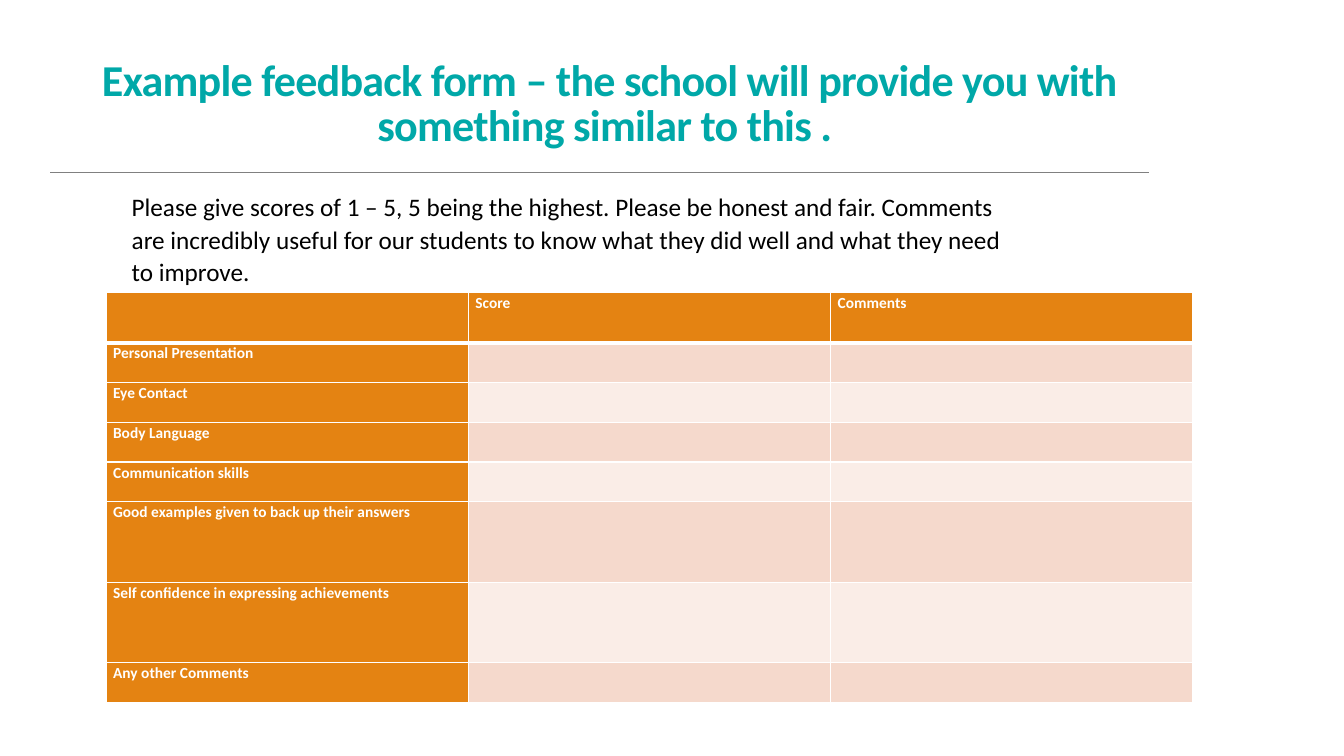
from dataclasses import dataclass

from lxml import etree
from pptx import Presentation
from pptx.dml.color import RGBColor
from pptx.enum.shapes import MSO_CONNECTOR
from pptx.enum.text import MSO_ANCHOR, MSO_AUTO_SIZE, PP_ALIGN
from pptx.oxml.ns import qn
from pptx.util import Cm, Pt

STRAIGHT = MSO_CONNECTOR.STRAIGHT
BOTTOM = MSO_ANCHOR.BOTTOM
CENTER = PP_ALIGN.CENTER
NO_FIT = MSO_AUTO_SIZE.NONE
GROW = MSO_AUTO_SIZE.SHAPE_TO_FIT_TEXT


@dataclass(frozen=True)
class Theme:
    font: str = "Calibri"
    title_size: float = 31.5
    body_size: float = 18
    table_size: float = 11
    teal: str = "00A8A8"
    black: str = "000000"
    white: str = "FFFFFF"
    grey: str = "808080"
    orange: str = "E48312"
    bands: tuple = ("F5D9CC", "FAEDE7")


THEME = Theme()


def set_font(font, size, color, bold=False):
    font.name = THEME.font
    font.size = Pt(size)
    font.bold = bold
    font.color.rgb = RGBColor.from_string(color)


def add_border(cell, side, points):
    """Draw a white border on one side (L, R, T or B); call before filling the cell."""
    properties = cell._tc.get_or_add_tcPr()
    line = etree.SubElement(properties, qn(f"a:ln{side}"), w=str(Pt(points)))
    fill = etree.SubElement(line, qn("a:solidFill"))
    etree.SubElement(fill, qn("a:srgbClr"), val=THEME.white)


presentation = Presentation()
presentation.slide_width = Cm(33.87)
presentation.slide_height = Cm(19.05)
slide = presentation.slides.add_slide(presentation.slide_layouts[5])

# Title and the rule below it
title = slide.shapes.title
title.left, title.top, title.width, title.height = Cm(1.27), Cm(2.08), Cm(27.94), Cm(2.24)
title_frame = title.text_frame
title_frame.word_wrap = True
title_frame.auto_size = NO_FIT
title_frame.vertical_anchor = BOTTOM
title_frame.margin_top = 0
title_frame.margin_bottom = Cm(0.53)
paragraph = title_frame.paragraphs[0]
paragraph.alignment = CENTER
paragraph.line_spacing = 0.85
run = paragraph.add_run()
run.text = " Example feedback form – the school will provide you with something similar to this ."
set_font(run.font, THEME.title_size, THEME.teal, bold=True)
run._r.get_or_add_rPr().set("spc", "-50")

rule = slide.shapes.add_connector(STRAIGHT, Cm(1.27), Cm(4.34), Cm(28.96), Cm(4.34))
rule.line.color.rgb = RGBColor.from_string(THEME.grey)
rule.line.width = Pt(0.5)
etree.SubElement(rule._element.spPr, qn("a:effectLst"))

# Feedback table
criteria = [
    ("Personal Presentation", 1),
    ("Eye Contact", 1),
    ("Body Language", 1),
    ("Communication skills", 1),
    ("Good examples given to back up their answers", 2.03),
    ("Self confidence in expressing achievements", 2.03),
    ("Any other Comments", 1),
]
rows = [(("", "Score", "Comments"), 1.27)]
rows += [((label, "", ""), height) for label, height in criteria]

table = slide.shapes.add_table(len(rows), 3, Cm(2.67), Cm(7.37), Cm(27.39), Cm(10.33)).table
for column in table.columns:
    column.width = Cm(9.13)

for row_index, (texts, height) in enumerate(rows):
    table.rows[row_index].height = Cm(height)
    for column_index, text in enumerate(texts):
        cell = table.cell(row_index, column_index)
        cell.margin_left = cell.margin_right = Cm(0.18)
        cell.margin_top = cell.margin_bottom = 0
        add_border(cell, "L", 1)
        add_border(cell, "R", 1)
        add_border(cell, "T", 3 if row_index == 1 else 1)
        add_border(cell, "B", 3 if row_index == 0 else 1)
        is_heading = row_index == 0 or column_index == 0
        color = THEME.orange if is_heading else THEME.bands[(row_index - 1) % 2]
        cell.fill.solid()
        cell.fill.fore_color.rgb = RGBColor.from_string(color)
        cell.text = text
        paragraph = cell.text_frame.paragraphs[0]
        paragraph.line_spacing = 1.07
        set_font(paragraph.font, THEME.table_size, THEME.white, bold=True)

# Scoring instructions
instructions = slide.shapes.add_textbox(Cm(3.07), Cm(4.65), Cm(22.53), Cm(2.72))
instructions.text_frame.word_wrap = True
instructions.text_frame.auto_size = GROW
paragraph = instructions.text_frame.paragraphs[0]
paragraph.text = (
    "Please give scores of 1 – 5, 5 being the highest. Please be honest and fair. "
    "Comments are incredibly useful for our students to know what they did well "
    "and what they need to improve."
)
paragraph.line_spacing = 1.07
paragraph.space_after = Pt(8)
set_font(paragraph.font, THEME.body_size, THEME.black)

presentation.save("out.pptx")
